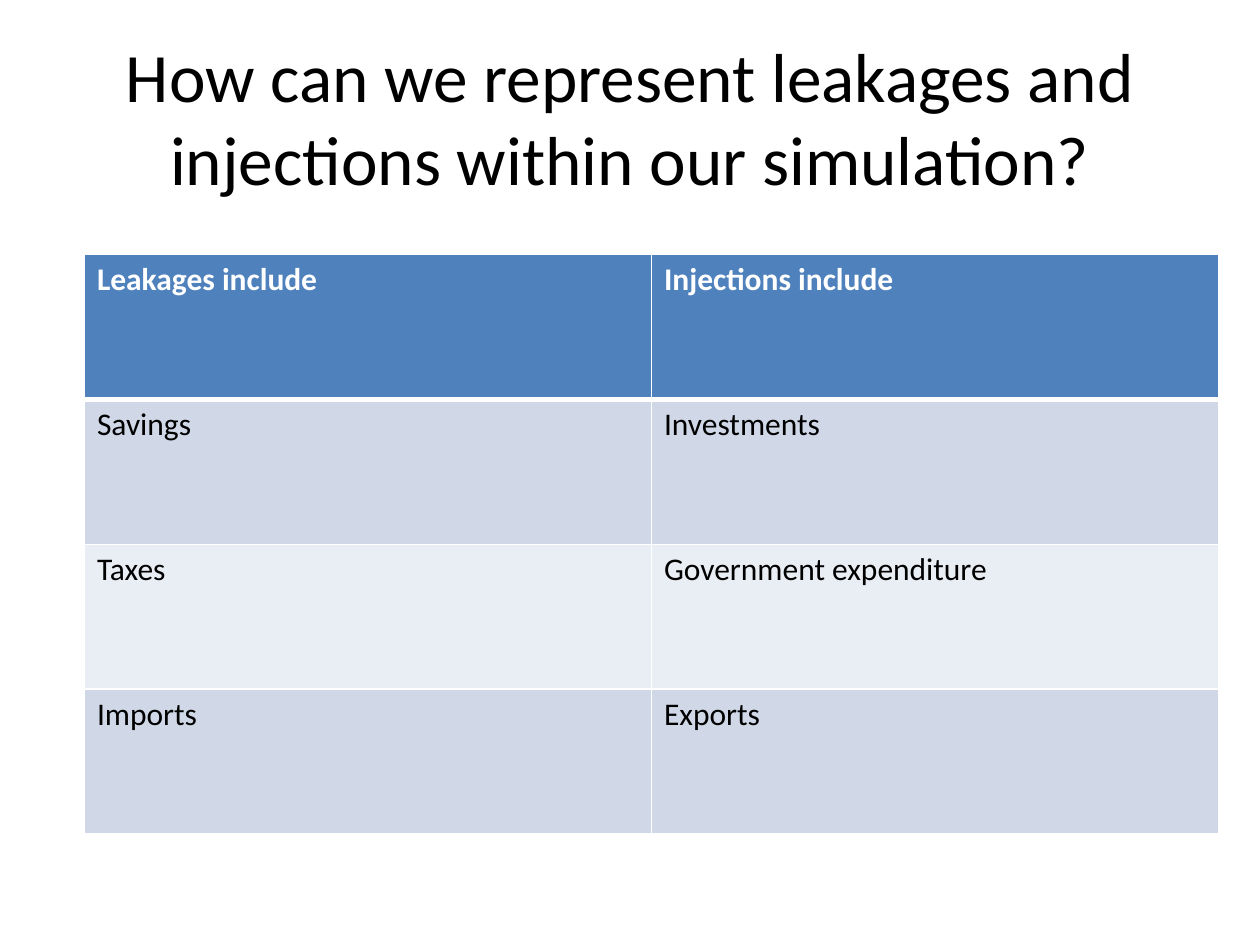
from lxml.etree import SubElement
from pptx import Presentation
from pptx.dml.color import RGBColor
from pptx.enum.text import MSO_ANCHOR, MSO_AUTO_SIZE, PP_ALIGN
from pptx.oxml.ns import qn
from pptx.util import Inches, Pt

WIDTH, HEIGHT = Inches(10), Inches(7.5)
TITLE = "How can we represent leakages and injections within our simulation?"
ROWS = [
    ("Leakages include", "Injections include"),
    ("Savings", "Investments"),
    ("Taxes", "Government expenditure"),
    ("Imports", "Exports"),
]
HEADER_FILL, BANDS = "4F81BD", ("E9EDF4", "D0D8E8")
WHITE, BLACK = "FFFFFF", "000000"


def color(value):
    """Turn a hex string into a colour."""
    return RGBColor.from_string(value)


def apply_format(target, values):
    """Set every attribute named in a dict of values."""
    for name, value in values.items():
        setattr(target, name, value)


def write(frame, text, size, ink, bold=False):
    """Put one formatted span into a text frame and return its paragraph."""
    para = frame.paragraphs[0]
    span = para.add_run()
    span.text = text
    apply_format(span.font, {"name": "Calibri", "size": Pt(size), "bold": bold})
    span.font.color.rgb = color(ink)
    return para


def add_title(page):
    """Place the centred heading in the title placeholder."""
    box = page.shapes.title
    apply_format(box, {
        "left": int(WIDTH * 0.05), "top": int(HEIGHT * 0.04),
        "width": int(WIDTH * 0.9), "height": Inches(1.25),
    })
    apply_format(box.text_frame, {
        "word_wrap": True, "auto_size": MSO_AUTO_SIZE.NONE,
        "vertical_anchor": MSO_ANCHOR.MIDDLE,
    })
    write(box.text_frame, TITLE, 39.6, BLACK).alignment = PP_ALIGN.CENTER


def add_borders(cell, widths):
    """Draw white lines of the given widths on the sides of a cell."""
    properties = cell._tc.get_or_add_tcPr()
    for side, width in widths.items():
        line = SubElement(properties, qn(f"a:ln{side}"), w=str(Pt(width)))
        fill = SubElement(line, qn("a:solidFill"))
        SubElement(fill, qn("a:srgbClr"), val=WHITE)


def add_flow_table(page):
    """Build the table of leakages and injections."""
    frame = page.shapes.add_table(
        len(ROWS), len(ROWS[0]), Inches(0.67), Inches(2.02), Inches(9), Inches(4.6))
    for row, texts in enumerate(ROWS):
        header = row == 0
        for column, text in enumerate(texts):
            cell = frame.table.cell(row, column)
            add_borders(cell, {
                "L": 1, "R": 1, "T": 3 if row == 1 else 1, "B": 3 if header else 1})
            cell.fill.solid()
            cell.fill.fore_color.rgb = color(HEADER_FILL if header else BANDS[row % 2])
            write(cell.text_frame, text, 18, WHITE if header else BLACK, header)


def main():
    """Build and save the deck."""
    deck = Presentation()
    apply_format(deck, {"slide_width": WIDTH, "slide_height": HEIGHT})
    page = deck.slides.add_slide(deck.slide_layouts.get_by_name("Title Only"))
    add_title(page)
    add_flow_table(page)
    deck.save("out.pptx")


if __name__ == "__main__":
    main()
